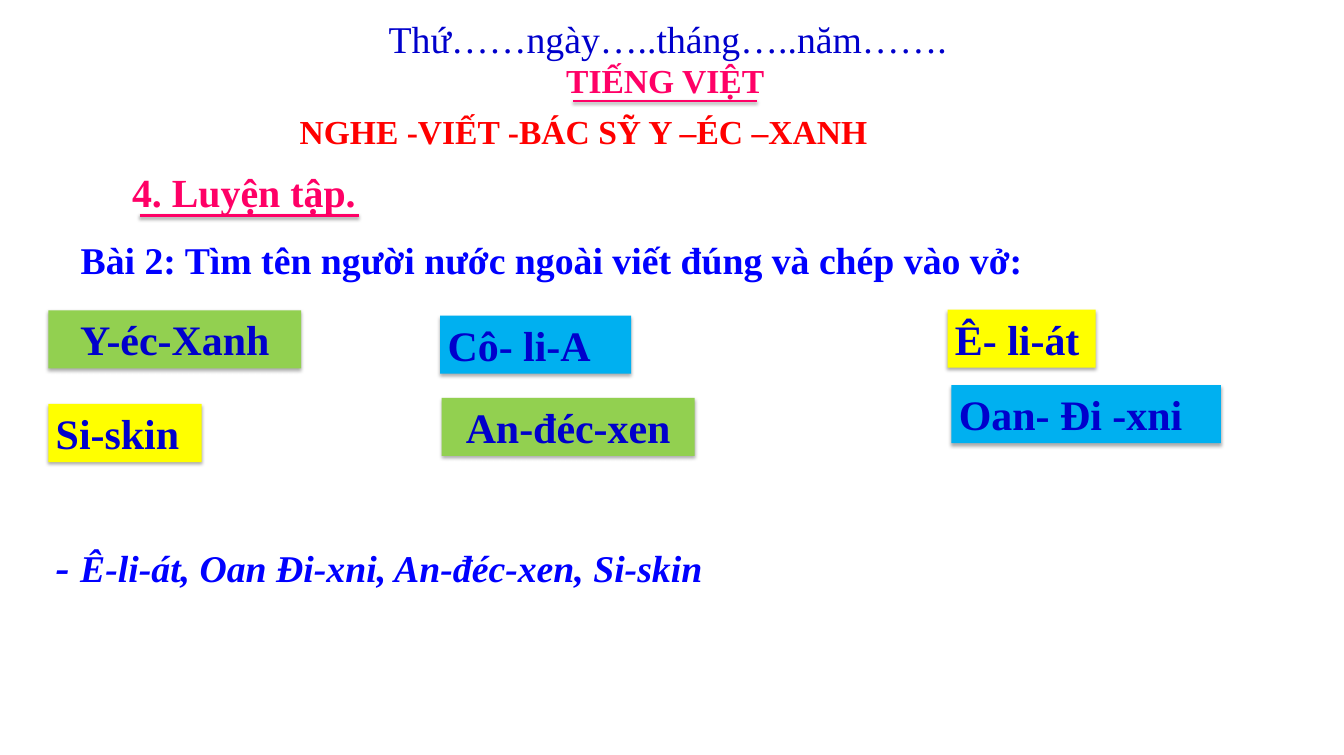
import lxml.etree
import pptx
import pptx.dml.color
import pptx.enum.shapes
import pptx.enum.text
import pptx.oxml.ns
import pptx.util
from dataclasses import dataclass

PX = 9144  # 100 px to the inch
ALIGN = pptx.enum.text.PP_ALIGN
SHAPES = pptx.enum.shapes


@dataclass(frozen=True)
class Theme:
    font: str = "Times New Roman"
    navy: str = "0000CC"
    blue: str = "0000FF"
    pink: str = "FF0066"
    red: str = "FF0000"
    green: str = "92D050"
    yellow: str = "FFFF00"
    sky: str = "00B0F0"
    title: int = 32
    body: int = 36
    section: int = 38
    card: int = 40


THEME = Theme()


def emu(*lengths):
    return [pptx.util.Emu(length * PX) for length in lengths]


def rgb(code):
    return pptx.dml.color.RGBColor.from_string(code)


def add_shadow(shape, opacity, blur, distance):
    properties = shape._element.spPr
    for old in properties.findall(pptx.oxml.ns.qn("a:effectLst")):
        properties.remove(old)
    effects = lxml.etree.SubElement(properties, pptx.oxml.ns.qn("a:effectLst"))
    shadow = lxml.etree.SubElement(
        effects, pptx.oxml.ns.qn("a:outerShdw"),
        blurRad=str(pptx.util.Pt(blur)), dist=str(pptx.util.Pt(distance)),
        dir="5400000", rotWithShape="0")
    color = lxml.etree.SubElement(shadow, pptx.oxml.ns.qn("a:srgbClr"), val="000000")
    lxml.etree.SubElement(color, pptx.oxml.ns.qn("a:alpha"), val=str(opacity * 1000))


def write(shape, runs, color, align=ALIGN.LEFT, bold=True, italic=False, wrap=True):
    """Fill a shape with one paragraph of (text, size) runs."""
    frame = shape.text_frame
    frame.word_wrap = wrap
    frame.auto_size = pptx.enum.text.MSO_AUTO_SIZE.SHAPE_TO_FIT_TEXT
    frame.vertical_anchor = pptx.enum.text.MSO_ANCHOR.TOP
    paragraph = frame.paragraphs[0]
    paragraph.alignment = align
    for text, size in runs:
        run = paragraph.add_run()
        run.text = text
        run.font.name = THEME.font
        run.font.size = pptx.util.Pt(size)
        run.font.bold = bold
        run.font.italic = italic
        run.font.color.rgb = rgb(color)
    return frame


def add_text(shapes, box, runs, color, **style):
    return write(shapes.add_textbox(*emu(*box)), runs, color, **style)


def add_underline(shapes, left, top, width, weight, opacity, distance):
    line = shapes.add_connector(
        SHAPES.MSO_CONNECTOR.STRAIGHT, *emu(left, top, left + width, top))
    line.line.color.rgb = rgb(THEME.pink)
    line.line.width = pptx.util.Pt(weight)
    add_shadow(line, opacity, 3.1, distance)


def add_header(slide, left, top, width):
    # Date line and underlined subject
    heading = slide.shapes.add_group_shape().shapes
    add_text(heading, (left + 157, top, 767, 71),
             [("Thứ……ngày…..tháng…..năm…….", THEME.body)],
             THEME.navy, bold=False, wrap=False)
    add_text(heading, (left + 392, top + 59, 285, 64),
             [("TIẾNG VIỆT", THEME.title)], THEME.pink, wrap=False)
    add_underline(heading, left + 411, top + 118, 244, 2, 38, 1.6)
    # Lesson title
    lesson = add_text(slide.shapes, (left, top + 123, width, 70),
                      [("NGHE -VIẾT -BÁC SỸ Y –ÉC –XANH", THEME.title)],
                      THEME.red, align=ALIGN.CENTER)
    lesson.margin_left, lesson.margin_top = emu(16, 8)
    lesson.margin_right, lesson.margin_bottom = emu(16, 8)


def add_exercise(slide, left, top, width):
    section = slide.shapes.add_group_shape().shapes
    add_text(section, (left + 68, top, 458, 74),
             [("4. Luyện tập.", THEME.section)], THEME.pink)
    add_underline(section, left + 88, top + 69, 290, 3, 35, 1.8)
    add_text(slide.shapes, (left, top + 92, width, 71),
             [("Bài 2: Tìm tên người nước ngoài viết đúng và chép vào vở:", THEME.body)],
             THEME.blue)


def add_name_cards(slide, left, top):
    # Name, x, y, width, fill, alignment
    cards = [
        ("Y-éc-Xanh", 0, 1, 335, THEME.green, ALIGN.CENTER),
        ("Cô- li-A", 519, 8, 253, THEME.sky, ALIGN.LEFT),
        ("Ê- li-át", 1191, 0, 196, THEME.yellow, ALIGN.LEFT),
        ("Si-skin", 0, 125, 203, THEME.yellow, ALIGN.LEFT),
        ("An-đéc-xen", 521, 117, 335, THEME.green, ALIGN.CENTER),
        ("Oan- Đi -xni", 1196, 100, 357, THEME.sky, ALIGN.LEFT),
    ]
    for name, x, y, width, fill, align in cards:
        card = slide.shapes.add_shape(
            SHAPES.MSO_SHAPE.RECTANGLE, *emu(left + x, top + y, width, 77))
        card.fill.solid()
        card.fill.fore_color.rgb = rgb(fill)
        card.line.fill.background()
        card.shadow.inherit = False
        add_shadow(card, 32, 3.5, 2.2)
        write(card, [(name, THEME.card)], THEME.navy, align=align)


def add_answer(slide, left, top, width):
    answer = add_text(
        slide.shapes, (left, top, width, 84),
        [("- ", THEME.card), ("Ê-li-át, Oan Đi-xni, An-đéc-xen, Si-skin", THEME.body)],
        THEME.blue, align=ALIGN.JUSTIFY, italic=True)
    answer.paragraphs[0].line_spacing = 1.2


def main():
    deck = pptx.Presentation()
    deck.slide_width, deck.slide_height = emu(1780, 1000)
    slide = deck.slides.add_slide(deck.slide_layouts[6])
    add_header(slide, 348, 16, 850)
    add_exercise(slide, 97, 217, 1585)
    add_name_cards(slide, 64, 410)
    add_answer(slide, 64, 698, 1006)
    deck.save("out.pptx")


if __name__ == "__main__":
    main()
